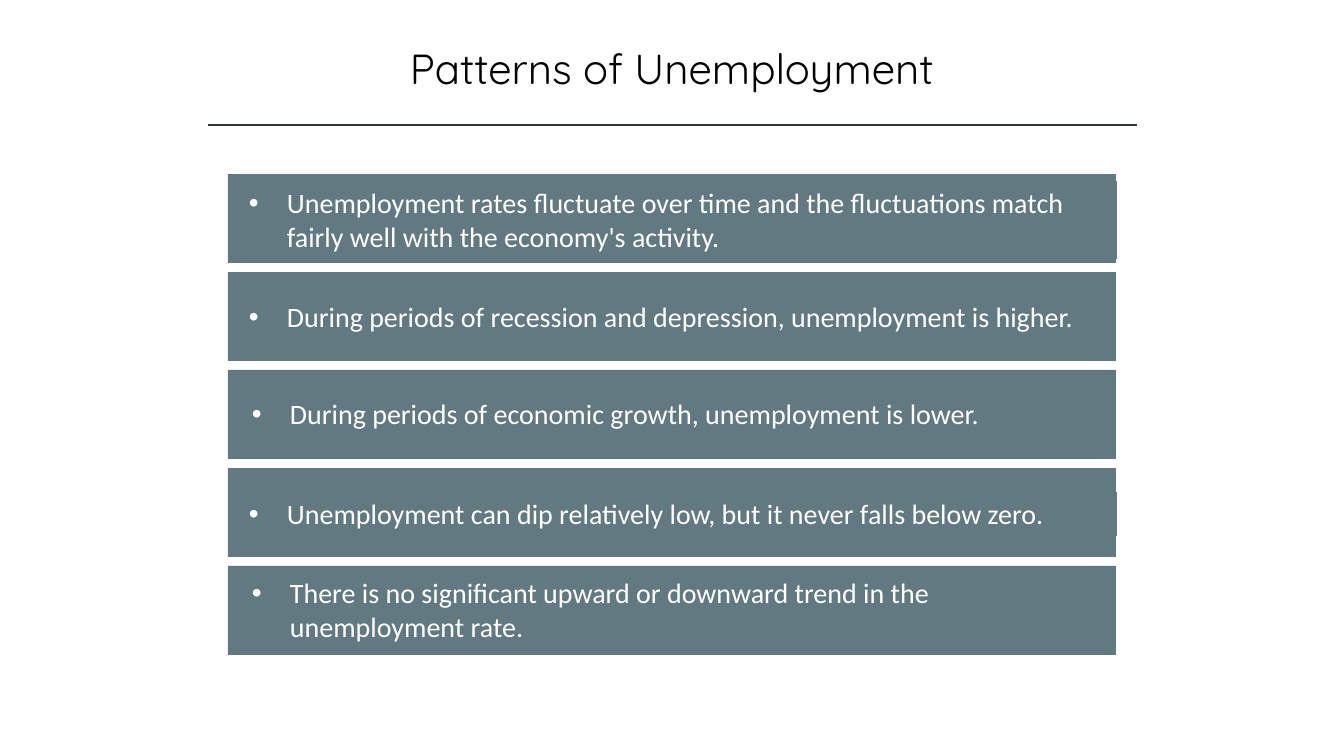
import pptx
import pptx.util
import pptx.dml.color
import pptx.enum.shapes
import pptx.enum.text
import pptx.oxml
from dataclasses import dataclass

PX = 914400 / 100.8  # EMU in one px


@dataclass(frozen=True)
class Theme:
    bar: str = "627981"
    rule: str = "323542"
    title: str = "000000"
    label: str = "FFFFFF"
    title_font: str = "Quicksand"
    label_font: str = "Calibri"
    title_size: int = 30
    label_size: int = 20


THEME = Theme()
BAR_LEFT, BAR_TOP, BAR_WIDTH, BAR_HEIGHT, BAR_STEP = 228, 174, 888, 89, 98
BULLET_INDENT = 38

# text, then label left, offset below the bar top, width and height
PATTERNS = [
    ("Unemployment rates fluctuate over time and the fluctuations match "
     "fairly well with the economy's activity.", 239, 7, 878, 78),
    ("During periods of recession and depression, unemployment is higher.",
     239, 23, 861, 44),
    ("During periods of economic growth, unemployment is lower.",
     242, 22, 861, 44),
    ("Unemployment can dip relatively low, but it never falls below zero.",
     239, 24, 878, 44),
    ("There is no significant upward or downward trend in the "
     "unemployment rate.", 242, 5, 861, 78),
]


def emu(px):
    return pptx.util.Emu(round(px * PX))


def rgb(color):
    return pptx.dml.color.RGBColor.from_string(color)


def add_bullet(para):
    properties = para._p.get_or_add_pPr()
    properties.set("marL", str(emu(BULLET_INDENT)))
    properties.set("indent", str(emu(-BULLET_INDENT)))
    for tag, name, value in (("buFont", "typeface", "Arial"), ("buChar", "char", "•")):
        element = pptx.oxml.parse_xml(
            f'<a:{tag} xmlns:a="http://schemas.openxmlformats.org/drawingml/2006/main" '
            f'{name}="{value}"/>')
        properties.append(element)


def write_text(shape, text, *, font, size, color, align, bullet=False):
    frame = shape.text_frame
    frame.word_wrap = True
    frame.auto_size = pptx.enum.text.MSO_AUTO_SIZE.NONE
    frame.vertical_anchor = pptx.enum.text.MSO_ANCHOR.TOP
    para = frame.paragraphs[0]
    para.alignment = align
    if bullet:
        add_bullet(para)
    span = para.add_run()
    span.text = text
    span.font.name = font
    span.font.size = pptx.util.Pt(size)
    span.font.color.rgb = rgb(color)


def add_title(page, text):
    title = page.shapes.title
    title.left, title.top, title.width, title.height = map(emu, (168, 37, 1008, 61))
    write_text(title, text, font=THEME.title_font, size=THEME.title_size,
               color=THEME.title, align=pptx.enum.text.PP_ALIGN.CENTER)


def add_rule(page, left, right, top):
    rule = page.shapes.add_connector(pptx.enum.shapes.MSO_CONNECTOR.STRAIGHT,
                                     emu(left), emu(top), emu(right), emu(top))
    rule.line.color.rgb = rgb(THEME.rule)
    rule.line.width = pptx.util.Pt(1)
    rule._element.spPr.append(pptx.oxml.parse_xml(
        '<a:effectLst xmlns:a="http://schemas.openxmlformats.org/drawingml/2006/main"/>'))


def add_box(page, left, top, width, height):
    box = page.shapes.add_shape(pptx.enum.shapes.MSO_SHAPE.RECTANGLE,
                                *map(emu, (left, top, width, height)))
    box.shadow.inherit = False
    box.fill.solid()
    box.fill.fore_color.rgb = rgb(THEME.bar)
    box.line.fill.background()
    return box


def add_pattern(page, bar_top, text, left, offset, width, height):
    add_box(page, BAR_LEFT, bar_top, BAR_WIDTH, BAR_HEIGHT)
    label = add_box(page, left, bar_top + offset, width, height)
    write_text(label, text, font=THEME.label_font, size=THEME.label_size,
               color=THEME.label, align=pptx.enum.text.PP_ALIGN.LEFT, bullet=True)


def main():
    deck = pptx.Presentation()
    deck.slide_width, deck.slide_height = emu(1344), emu(756)
    page = deck.slides.add_slide(deck.slide_layouts[5])

    # Heading
    add_title(page, "Patterns of Unemployment")
    add_rule(page, 208, 1137, 125)

    # Stack of bars
    for index, pattern in enumerate(PATTERNS):
        add_pattern(page, BAR_TOP + index * BAR_STEP, *pattern)

    deck.save("out.pptx")


if __name__ == "__main__":
    main()
